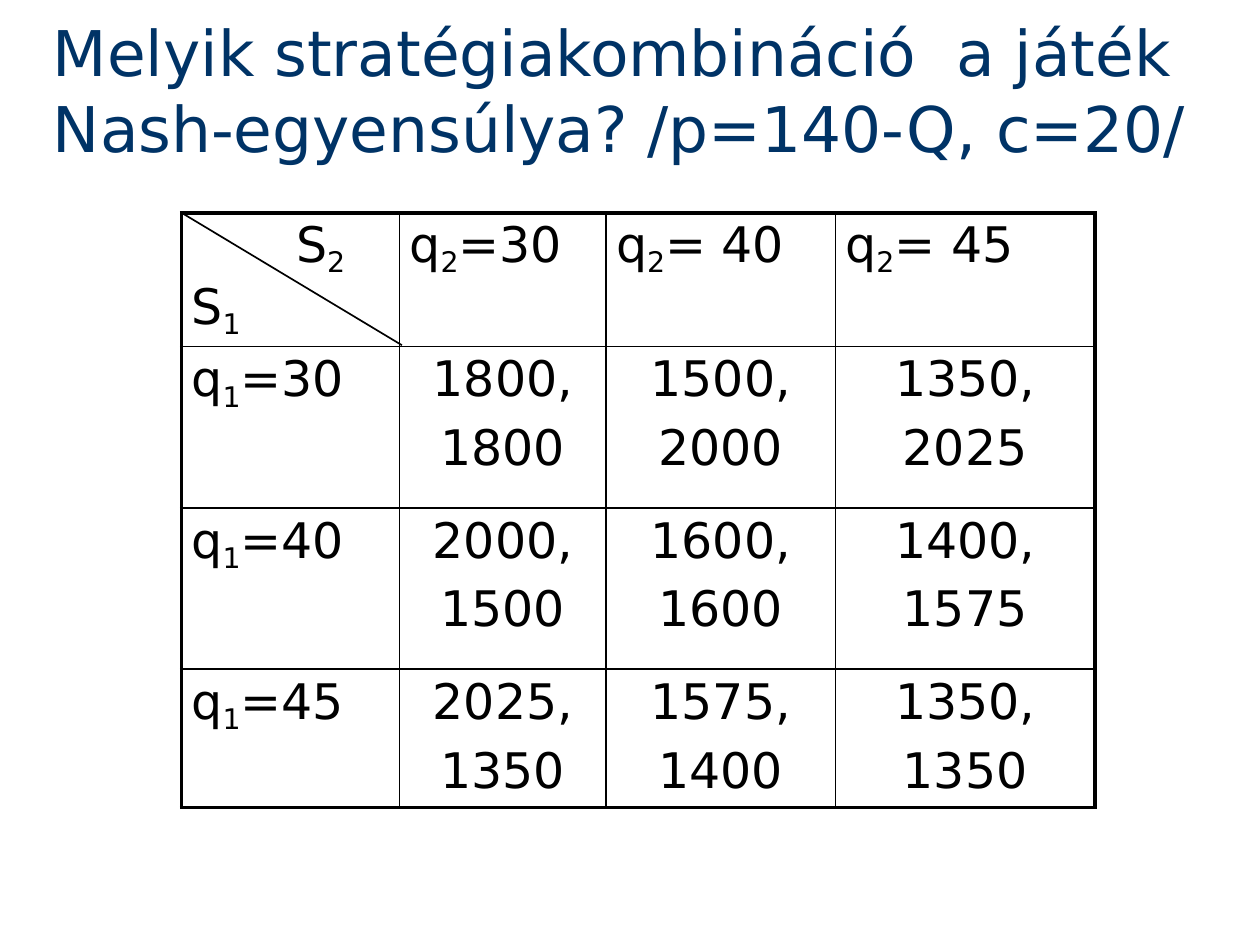
import pptx
import pptx.dml.color
import pptx.enum.shapes
import pptx.enum.text
import pptx.util
from lxml import etree

Inches, Pt = pptx.util.Inches, pptx.util.Pt
FONT, NAVY, BLACK = "DejaVu Sans", "003366", "000000"
DRAWING = "http://schemas.openxmlformats.org/drawingml/2006/main"


def colour(value):
    return pptx.dml.color.RGBColor.from_string(value)


def write(para, text, size, tint):
    """Fill a paragraph; the character after each underscore is a subscript."""
    para.font.name = FONT
    para.font.size = Pt(size)
    para.font.color.rgb = colour(tint)
    first, *rest = text.split("_")
    pieces = [(first, False)]
    for part in rest:
        pieces += [(part[0], True), (part[1:], False)]
    for piece, lowered in pieces:
        if piece:
            span = para.add_run()
            span.text = piece
            if lowered:
                span.font._element.set("baseline", "-21000")


deck = pptx.Presentation()
deck.slide_width, deck.slide_height = Inches(10), Inches(7.5)
page = deck.slides.add_slide(deck.slide_layouts[6])

# Title
title = page.shapes.add_textbox(Inches(0.42), Inches(0.08), Inches(9.3), Inches(1.23))
frame = title.text_frame
frame.word_wrap = True
frame.margin_left = frame.margin_right = frame.margin_bottom = 0
frame.margin_top = Inches(0.03)
write(frame.paragraphs[0],
      "Melyik stratégiakombináció  a játék Nash-egyensúlya? /p=140-Q, c=20/", 36, NAVY)

# Payoff table: cells hold one text per paragraph
left, top = 1.44, 1.69
widths = [1.73, 1.64, 1.82, 2.06]
heights = [1, 1.28, 1.28, 1.1]
payoffs = [
    [["S_2", "S_1"], ["q_2=30"], ["q_2= 40"], ["q_2= 45"]],
    [["q_1=30"], ["1800,", "1800"], ["1500,", "2000"], ["1350,", "2025"]],
    [["q_1=40"], ["2000,", "1500"], ["1600,", "1600"], ["1400,", "1575"]],
    [["q_1=45"], ["2025,", "1350"], ["1575,", "1400"], ["1350,", "1350"]],
]

# Diagonal of the corner cell
diagonal = page.shapes.add_connector(
    pptx.enum.shapes.MSO_CONNECTOR.STRAIGHT, Inches(left + 0.02), Inches(top + 0.01),
    Inches(left + 0.02 + widths[0]), Inches(top + 0.05 + heights[0]))
diagonal.line.color.rgb = colour(BLACK)
diagonal.line.width = Pt(0.96)
etree.SubElement(diagonal._element.spPr, f"{{{DRAWING}}}effectLst")

table = page.shapes.add_table(4, 4, Inches(left), Inches(top),
                              Inches(sum(widths)), Inches(sum(heights))).table
table.first_row = table.horz_banding = False
for column, width in zip(table.columns, widths):
    column.width = Inches(width)
for row, height in zip(table.rows, heights):
    row.height = Inches(height)

for r, texts in enumerate(payoffs):
    for c, lines in enumerate(texts):
        cell = table.cell(r, c)
        heading = r == 0 or c == 0
        cell.margin_left = Inches(0.08 if heading else 0)
        cell.margin_right = cell.margin_bottom = 0
        cell.margin_top = Inches(0.03 if r == 0 else 0.04)

        # Thick outer frame, thin inner rules
        edges = {"lnL": c == 0, "lnR": c == 3, "lnT": r == 0, "lnB": r == 3}
        properties = cell._tc.get_or_add_tcPr()
        for edge, outer in edges.items():
            border = etree.SubElement(properties, f"{{{DRAWING}}}{edge}",
                                      w=str(Pt(2.25 if outer else 1)))
            fill = etree.SubElement(border, f"{{{DRAWING}}}solidFill")
            etree.SubElement(fill, f"{{{DRAWING}}}srgbClr", val=BLACK)
        cell.fill.background()

        for i, text in enumerate(lines):
            para = cell.text_frame.paragraphs[0] if i == 0 else cell.text_frame.add_paragraph()
            if not heading:
                para.alignment = pptx.enum.text.PP_ALIGN.CENTER
                if i > 0:
                    para.space_before = Pt(6.7)
            write(para, text, 28, BLACK)

# The column player's label sits above the diagonal
corner = table.cell(0, 0).text_frame.paragraphs[0]
corner._p.get_or_add_pPr().set("marL", str(Inches(0.83)))

deck.save("out.pptx")
